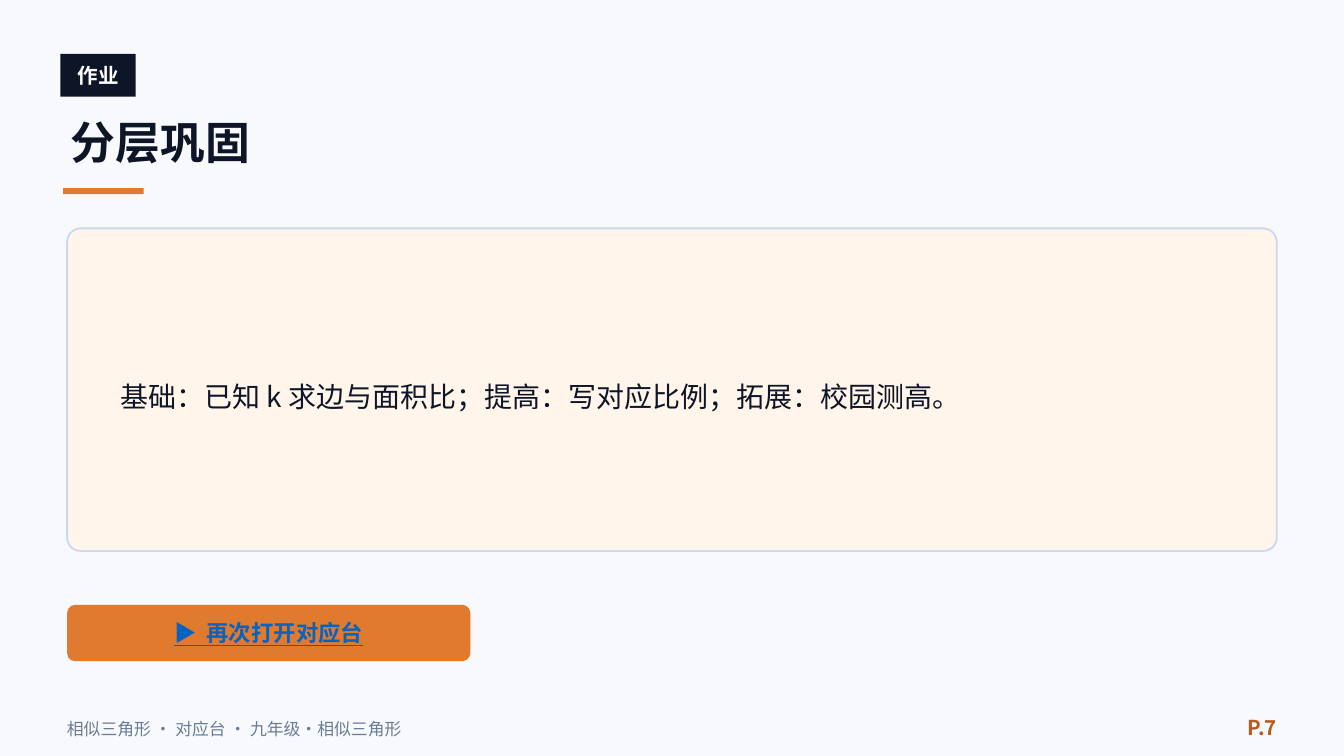
from lxml import etree
from pptx import Presentation
from pptx import util as u
from pptx.dml.color import RGBColor
from pptx.enum import shapes, text
from pptx.oxml.ns import qn

FONT = "Noto Sans CJK SC"
BACKGROUND = RGBColor(0xF7, 0xF9, 0xFC)
NAVY = RGBColor(0x0D, 0x15, 0x26)
WHITE = RGBColor(0xFF, 0xFF, 0xFF)
ORANGE = RGBColor(0xE0, 0x7A, 0x2F)
CREAM = RGBColor(0xFF, 0xF5, 0xEB)
BORDER = RGBColor(0xCB, 0xD8, 0xF2)
LINK_BLUE = RGBColor(0x05, 0x63, 0xC1)
SLATE = RGBColor(0x6A, 0x7C, 0x95)
RUST = RGBColor(0xB8, 0x5A, 0x18)

COLS, ROWS = 100, 56.25
CELL = u.Inches(0.1)
LEFT, CENTER, RIGHT = text.PP_ALIGN.LEFT, text.PP_ALIGN.CENTER, text.PP_ALIGN.RIGHT


def grid(*cells):
    """Turn columns and rows of the grid into lengths."""
    return [u.Emu(round(n * CELL)) for n in cells]


def add_block(s, box, fill, radius=None, border=None):
    """Add a filled rectangle, rounded by radius (in cells) if given."""
    kinds = shapes.MSO_SHAPE
    kind = kinds.ROUNDED_RECTANGLE if radius else kinds.RECTANGLE
    sp = s.shapes.add_shape(kind, *grid(*box))
    sp.shadow.inherit = False
    sp.fill.solid()
    sp.fill.fore_color.rgb = fill
    if radius:
        sp.adjustments[0] = radius / min(box[2:])
    if border:
        sp.line.color.rgb = border
        sp.line.width = u.Pt(1)
    else:
        sp.line.fill.background()


def add_label(s, box, words, size, color, bold=False, align=LEFT, underline=None):
    tf = s.shapes.add_textbox(*grid(*box)).text_frame
    tf.word_wrap = True
    tf.vertical_anchor = text.MSO_ANCHOR.MIDDLE
    p = tf.paragraphs[0]
    p.text = words
    p.alignment = align
    font = p.font
    font.size = u.Pt(size)
    font.bold = bold
    font.underline = underline
    font.color.rgb = color
    font.name = FONT
    # East Asian glyphs take their typeface from a separate element
    etree.SubElement(p._p.pPr.find(qn("a:defRPr")), qn("a:ea"), typeface=FONT)


def add_heading(s):
    add_block(s, (4.5, 4, 5.6, 3.2), NAVY)
    add_label(s, (4.5, 3.9, 5.6, 3.4), "作业", 11, WHITE, True, CENTER)
    add_label(s, (4.3, 7.8, 90, 5.5), "分层巩固", 24, NAVY, True)
    add_block(s, (4.7, 14, 6, 0.45), ORANGE)


def add_homework(s):
    add_block(s, (5, 17, 90, 24), CREAM, 1, BORDER)
    add_label(s, (8, 19.5, 84, 20),
              "基础：已知 k 求边与面积比；提高：写对应比例；拓展：校园测高。", 15, NAVY)


def add_button(s):
    add_block(s, (5, 45, 30, 4.2), ORANGE, 0.6)
    add_label(s, (5, 44.9, 30, 4.4), "▶  再次打开对应台", 12, LINK_BLUE,
              True, CENTER, True)


def add_footer(s):
    add_label(s, (4, 52.8, 72, 2.8), "相似三角形 · 对应台 · 九年级·相似三角形", 9, SLATE)
    add_label(s, (90, 52.6, 6, 3), "P.7", 11, RUST, True, RIGHT)


def main():
    prs = Presentation()
    prs.slide_width, prs.slide_height = grid(COLS, ROWS)
    s = prs.slides.add_slide(prs.slide_layouts[6])
    s.background.fill.solid()
    s.background.fill.fore_color.rgb = BACKGROUND
    add_heading(s)
    add_homework(s)
    add_button(s)
    add_footer(s)
    prs.save("out.pptx")


if __name__ == "__main__":
    main()
